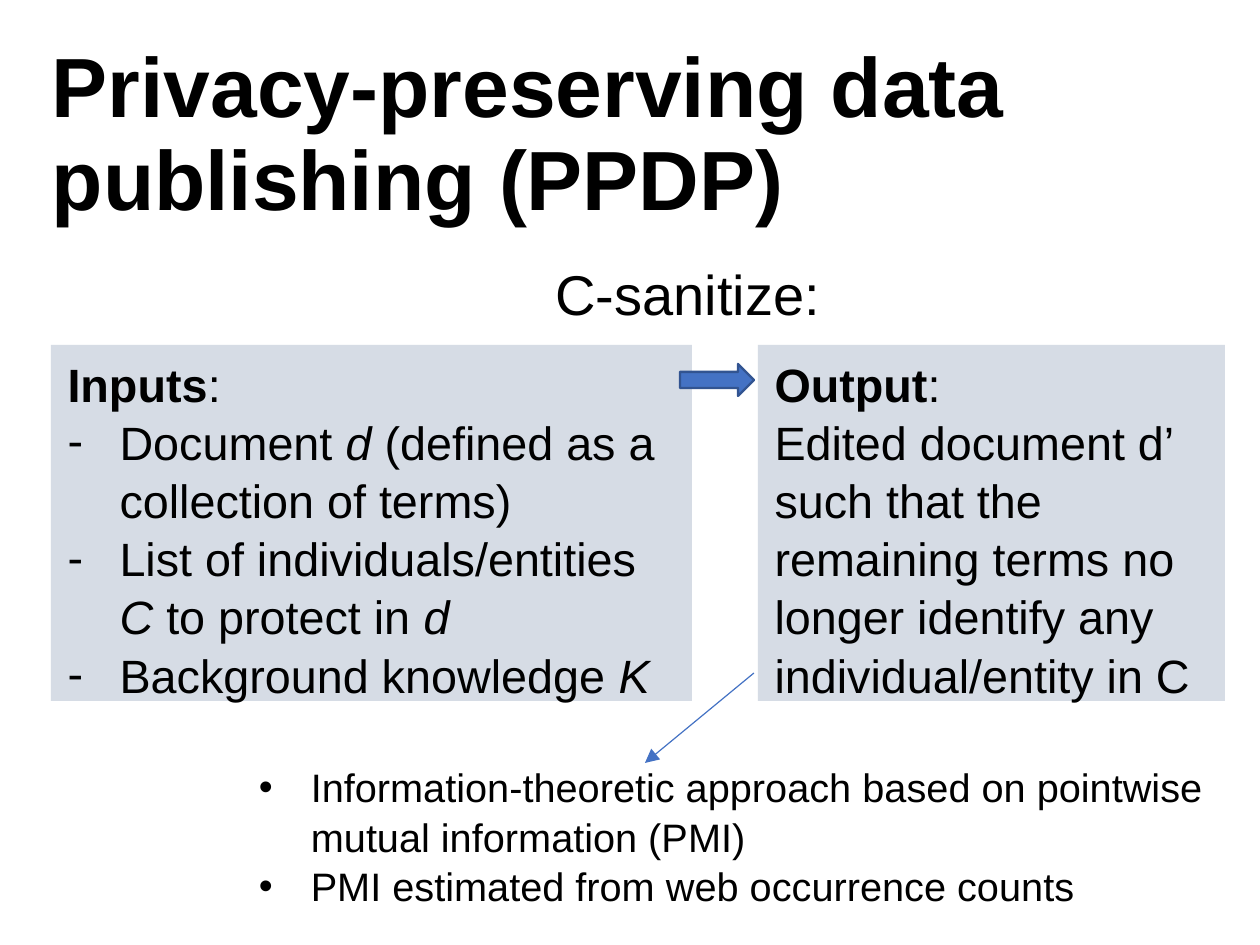
from lxml import etree
from pptx import Presentation
from pptx.dml.color import RGBColor
from pptx.enum.shapes import MSO_CONNECTOR as Connector, MSO_SHAPE as Shape
from pptx.enum.text import MSO_ANCHOR as Anchor, MSO_AUTO_SIZE as AutoSize, PP_ALIGN as Align
from pptx.oxml.ns import qn
from pptx.util import Pt

# Content: a paragraph is a bullet (or None) and its (text, style) runs
TITLE = "Privacy-preserving data publishing (PPDP)"
METHOD = [(None, [("C-sanitize:", "")])]
INPUTS = [
    (None, [("Inputs", "b"), (":", "")]),
    ("-", [("Document ", ""), ("d", "i"), (" (defined as a collection of terms)", "")]),
    ("-", [("List of individuals/entities ", ""), ("C", "i"),
           (" to protect in ", ""), ("d", "i")]),
    ("-", [("Background knowledge ", ""), ("K", "i")]),
]
OUTPUT = [
    (None, [("Output", "b"), (":", "")]),
    (None, [("Edited document d’ such that the remaining terms no longer "
             "identify any individual/entity in C", "")]),
]
APPROACH = [
    ("•", [("Information-theoretic approach based on pointwise mutual information (PMI)", "")]),
    ("•", [("PMI estimated from web occurrence counts", "")]),
]

# Layout in px, 168 to the inch
PANEL_TOP, PANEL_HEIGHT = 345, 356
PANELS = [(51, 641, INPUTS), (758, 467, OUTPUT)]
INDENT = 52
LINE_SPACING = 1.04
BLACK, WHITE, PANEL, BLUE, DARK_BLUE = "000000", "FFFFFF", "D6DCE5", "4472C4", "325491"


def px(length):
    return round(length * 914400 / 168)


def rgb(value):
    return RGBColor.from_string(value)


def place(shape, left, top, width, height):
    shape.left, shape.top, shape.width, shape.height = map(px, (left, top, width, height))


def set_font(font, size):
    font.name, font.size, font.color.rgb = "Arial", Pt(size), rgb(BLACK)


def set_bullet(paragraph, bullet):
    props = paragraph._p.get_or_add_pPr()
    props.set("marL", str(px(INDENT) if bullet else 0))
    props.set("indent", str(-px(INDENT) if bullet else 0))
    if bullet:
        etree.SubElement(props, qn("a:buFont"), typeface="Arial")
        etree.SubElement(props, qn("a:buChar"), char=bullet)
    else:
        etree.SubElement(props, qn("a:buNone"))


def write(shape, paragraphs, size, spacing=LINE_SPACING):
    frame = shape.text_frame
    frame.word_wrap, frame.auto_size = True, AutoSize.NONE
    frame.vertical_anchor = Anchor.TOP
    for index, (bullet, runs) in enumerate(paragraphs):
        paragraph = frame.add_paragraph() if index else frame.paragraphs[0]
        set_bullet(paragraph, bullet)
        paragraph.alignment = Align.LEFT
        paragraph.line_spacing = spacing
        paragraph.space_before = paragraph.space_after = Pt(0)
        set_font(paragraph.font, size)
        for text, style in runs:
            run = paragraph.add_run()
            run.text = text
            set_font(run.font, size)
            if style == "b":
                run.font.bold = True
            elif style == "i":
                run.font.italic = True


def add_block(slide, preset, box, fill, line=None):
    block = slide.shapes.add_shape(preset, *map(px, box))
    block.shadow.inherit = False
    block.fill.solid()
    block.fill.fore_color.rgb = rgb(fill)
    if line:
        block.line.color.rgb, block.line.width = rgb(line), Pt(1)
    else:
        block.line.fill.background()
    return block


def main():
    deck = Presentation()
    deck.slide_width, deck.slide_height = px(1260), px(945)
    slide = deck.slides.add_slide(deck.slide_layouts[1])
    slide.background.fill.solid()
    slide.background.fill.fore_color.rgb = rgb(WHITE)

    # Title
    title = slide.shapes.title
    place(title, 35, 99, 1191, 139)
    write(title, [(None, [(TITLE, "b")])], 36, 0.93)
    title.text_frame.vertical_anchor = Anchor.BOTTOM

    # Input and output panels
    for left, width, paragraphs in PANELS:
        box = (left, PANEL_TOP, width, PANEL_HEIGHT)
        write(add_block(slide, Shape.RECTANGLE, box, PANEL), paragraphs, 20)

    # Method name and arrow between the panels
    add_block(slide, Shape.RIGHT_ARROW, (680, 364, 74, 32), BLUE, DARK_BLUE)
    method = slide.shapes.add_textbox(*map(px, (539, 249, 630, 84)))
    write(method, METHOD, 24)

    # Approach list
    approach = slide.placeholders[1]
    place(approach, 242, 753, 995, 161)
    write(approach, APPROACH, 17)

    # Pointer from the output to the approach
    pointer = slide.shapes.add_connector(Connector.STRAIGHT, *map(px, (754, 673, 645, 763)))
    pointer.line.color.rgb, pointer.line.width = rgb(BLUE), Pt(0.5)
    etree.SubElement(pointer.line._get_or_add_ln(), qn("a:tailEnd"), type="triangle")
    etree.SubElement(pointer._element.spPr, qn("a:effectLst"))

    deck.save("out.pptx")


if __name__ == "__main__":
    main()
